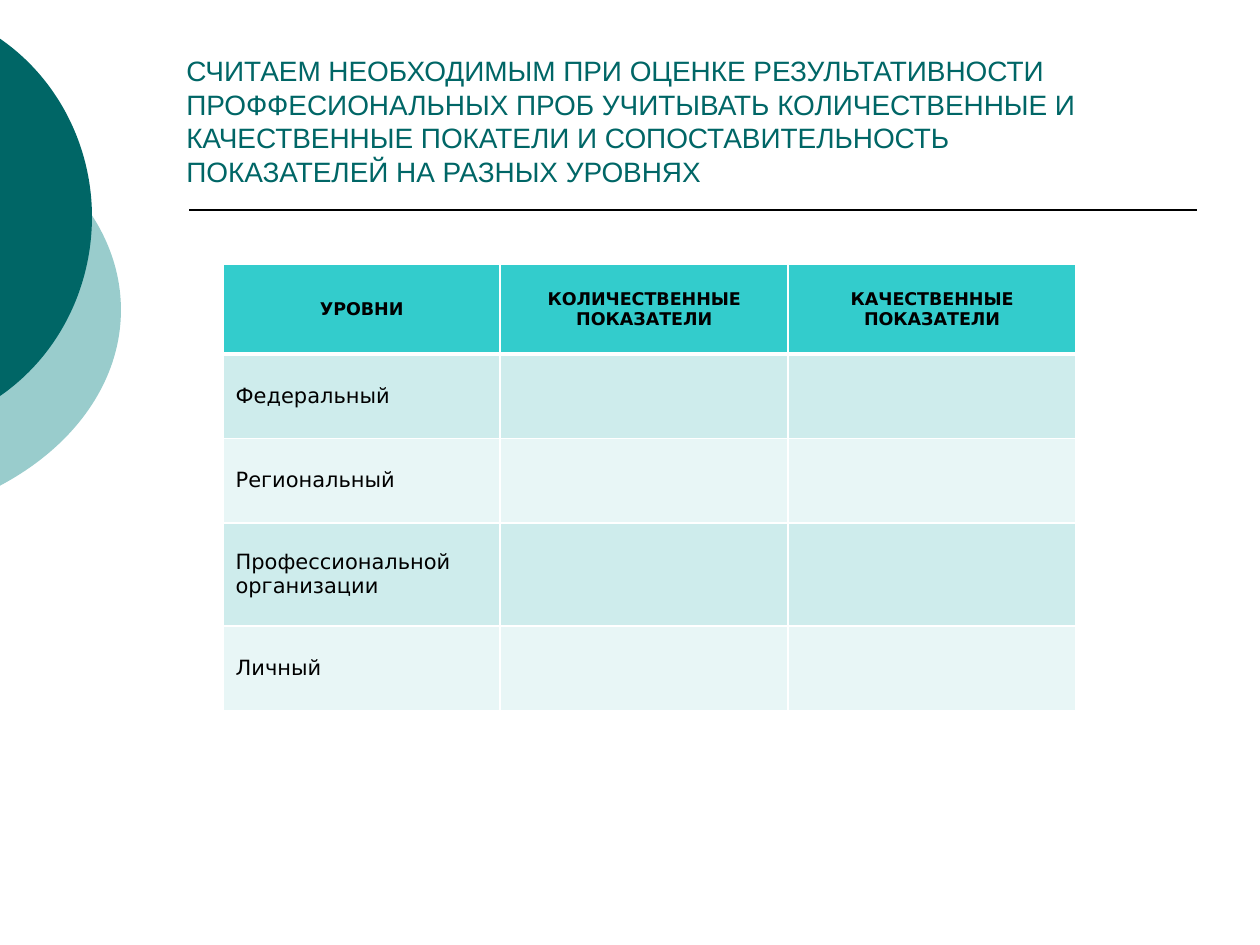
from dataclasses import dataclass

from lxml import etree
from pptx import Presentation
from pptx import util as u
from pptx.dml.color import RGBColor
from pptx.enum import shapes, text
from pptx.oxml import ns

W, H = 10, 7.5
TEAL, PALE_TEAL, BLACK, WHITE = "006666", "99CCCC", "000000", "FFFFFF"
HEADER, BANDS = "33CCCC", ("CEECEC", "E8F6F6")

TITLE = ("СЧИТАЕМ НЕОБХОДИМЫМ ПРИ ОЦЕНКЕ РЕЗУЛЬТАТИВНОСТИ ПРОФФЕСИОНАЛЬНЫХ ПРОБ "
         "УЧИТЫВАТЬ КОЛИЧЕСТВЕННЫЕ И КАЧЕСТВЕННЫЕ ПОКАТЕЛИ И СОПОСТАВИТЕЛЬНОСТЬ "
         "ПОКАЗАТЕЛЕЙ НА РАЗНЫХ УРОВНЯХ")
HEADINGS = ("УРОВНИ", "КОЛИЧЕСТВЕННЫЕ ПОКАЗАТЕЛИ", "КАЧЕСТВЕННЫЕ ПОКАЗАТЕЛИ")
LEVELS = ("Федеральный", "Региональный", "Профессиональной организации", "Личный")
TABLE_W, FIRST_COL = 6.77, 2.2
COLS = (FIRST_COL, *[(TABLE_W - FIRST_COL) / 2] * 2)
ROWS = (0.71, 0.67, 0.67, 0.82, 0.67)


@dataclass
class Disc:
    """Disc cut by the slide's left edge: its frame and the curve of its visible half."""
    left: float
    top: float
    width: float
    height: float
    cut: float      # y where the upper curve leaves the edge
    bend_x: float   # control point next to the edge
    bend_y: float
    side_y: float   # control point next to the rightmost point
    color: str


DISCS = (Disc(-3.54, 0.75, 4.5, 3.42, 1.06, 0.6, 1.38, 1.9, PALE_TEAL),
         Disc(-2.65, 0, 3.38, 3.45, 0.3, 0.46, 0.62, 1.16, TEAL))


def rgb(color: str) -> RGBColor:
    return RGBColor.from_string(color)


def write(tf, content: str, *, size: float, font: str, color: str,
          bold: bool = False, align=text.PP_ALIGN.LEFT) -> None:
    p = tf.paragraphs[0]
    p.alignment = align
    r = p.add_run()
    r.text = content
    r.font.size, r.font.name, r.font.bold = u.Pt(size), font, bold
    r.font.color.rgb = rgb(color)


def draw_disc(s, d: Disc) -> None:
    right, middle = d.left + d.width, d.top + d.height / 2
    upper = [(-0.01, d.cut), (d.bend_x, d.bend_y), (right, d.side_y)]
    lower = [(x, 2 * middle - y) for x, y in reversed(upper)]
    curve = [*upper, (right, middle), *lower]

    builder = s.shapes.build_freeform(scale=u.Inches(1))
    builder.add_line_segments([(1, 0), (1, 1)], close=True)
    sp = builder.convert_to_shape()
    sp.left, sp.top, sp.width, sp.height = (
        u.Inches(v) for v in (d.left, d.top, d.width, d.height))

    # Bezier outline, in hundredths of an inch inside the frame
    outline = sp._element.spPr.find(".//" + ns.qn("a:path"))
    for child in list(outline):
        outline.remove(child)
    outline.set("w", str(round(d.width * 100)))
    outline.set("h", str(round(d.height * 100)))
    for tag, points in (("moveTo", curve[:1]), ("cubicBezTo", curve[1:4]),
                        ("cubicBezTo", curve[4:]), ("close", ())):
        step = etree.SubElement(outline, ns.qn(f"a:{tag}"))
        for x, y in points:
            etree.SubElement(step, ns.qn("a:pt"), x=str(round((x - d.left) * 100)),
                             y=str(round((y - d.top) * 100)))

    sp.shadow.inherit = False
    sp.fill.solid()
    sp.fill.fore_color.rgb = rgb(d.color)
    sp.line.fill.background()


def draw_rule(s, x1: float, x2: float, y: float) -> None:
    line = s.shapes.add_connector(shapes.MSO_CONNECTOR.STRAIGHT,
                                  *(u.Inches(v) for v in (x1, y, x2, y)))
    line.line.color.rgb, line.line.width = rgb(BLACK), u.Pt(1)
    etree.SubElement(line._element.spPr, ns.qn("a:effectLst"))


def set_borders(cell, top: float, bottom: float) -> None:
    tc_pr = cell._tc.get_or_add_tcPr()
    for i, (side, width) in enumerate((("L", 1), ("R", 1), ("T", top), ("B", bottom))):
        ln = etree.Element(ns.qn(f"a:ln{side}"), w=str(u.Pt(width)))
        fill = etree.SubElement(ln, ns.qn("a:solidFill"))
        etree.SubElement(fill, ns.qn("a:srgbClr"), val=WHITE)
        tc_pr.insert(i, ln)


def draw_table(s, left: float, top: float) -> None:
    box = (left, top, TABLE_W, sum(ROWS))
    table = s.shapes.add_table(len(ROWS), len(COLS), *(u.Inches(v) for v in box)).table
    for column, width in zip(table.columns, COLS):
        column.width = u.Inches(width)
    for i, height in enumerate(ROWS):
        table.rows[i].height = u.Inches(height)
        for j in range(len(COLS)):
            cell = table.cell(i, j)
            cell.vertical_anchor = text.MSO_ANCHOR.MIDDLE
            cell.fill.solid()
            cell.fill.fore_color.rgb = rgb(BANDS[(i - 1) % 2] if i else HEADER)
            set_borders(cell, top=3 if i == 1 else 1, bottom=1 if i else 3)
            if i == 0:
                write(cell.text_frame, HEADINGS[j], size=10, font="DejaVu Sans",
                      color=BLACK, bold=True, align=text.PP_ALIGN.CENTER)
            elif j == 0:
                write(cell.text_frame, LEVELS[i - 1], size=12, font="DejaVu Sans", color=BLACK)


def main() -> None:
    prs = Presentation()
    prs.slide_width, prs.slide_height = u.Inches(W), u.Inches(H)
    s = prs.slides.add_slide(prs.slide_layouts[6])

    # Corner decoration and rule under the title
    for disc in DISCS:
        draw_disc(s, disc)
    draw_rule(s, 0.15 * W, 0.95 * W, H * 2 / 9)

    # Title
    tf = s.shapes.add_textbox(*(u.Inches(v) for v in (1.38, 0.44, 7.51, 1.1))).text_frame
    tf.word_wrap, tf.vertical_anchor = True, text.MSO_ANCHOR.BOTTOM
    write(tf, TITLE, size=16, font="Arial", color=TEAL)

    # Indicators by level
    draw_table(s, 1.77, 2.1)
    prs.save("out.pptx")


if __name__ == "__main__":
    main()
